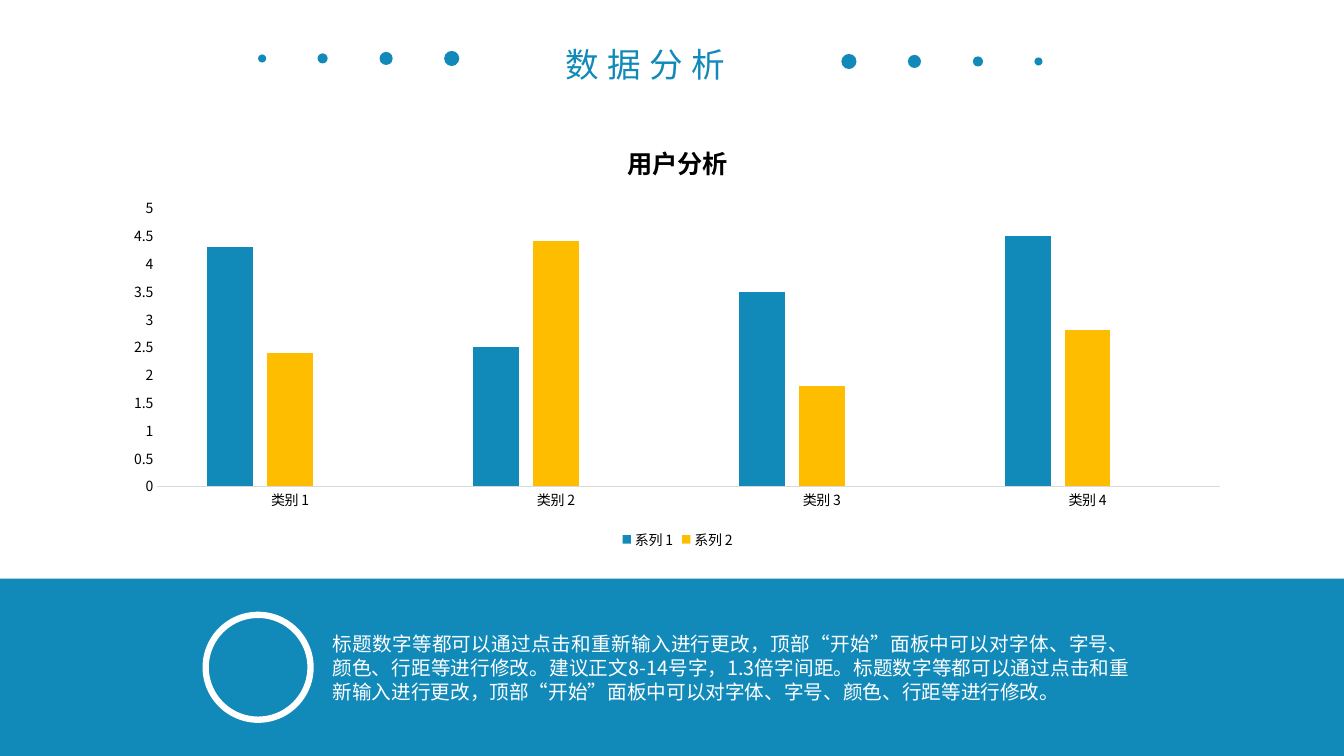
from copy import deepcopy
from lxml.etree import SubElement
from pptx import Presentation
from pptx.chart.data import CategoryChartData
from pptx.dml.color import RGBColor
from pptx.enum.chart import XL_CHART_TYPE, XL_LEGEND_POSITION, XL_TICK_MARK
from pptx.enum.shapes import MSO_SHAPE
from pptx.enum.text import PP_ALIGN
from pptx.oxml.ns import qn
from pptx.util import Inches, Pt

WIDE, HIGH = 13.33, 7.5
FONT = "Noto Sans CJK SC"
BLUE, GOLD, WHITE, BLACK, GRAY = "128AB9", "FFBD00", "FFFFFF", "000000", "D9D9D9"
TITLE = "数据分析"
BODY = ("标题数字等都可以通过点击和重新输入进行更改，顶部“开始”面板中可以对字体、字号、颜色、行距等进行修改。"
        "建议正文8-14号字，1.3倍字间距。"
        "标题数字等都可以通过点击和重新输入进行更改，顶部“开始”面板中可以对字体、字号、颜色、行距等进行修改。")
HEAD = "用户分析"
CATS = ["类别 1", "类别 2", "类别 3", "类别 4"]
SERIES = [
    ("系列 1", [4.3, 2.5, 3.5, 4.5], BLUE),
    ("系列 2", [2.4, 4.4, 1.8, 2.8], GOLD),
    ("Series 3", [None] * 4, GOLD),
]
DOTS = [(2.6, 0.08), (3.2, 0.1), (3.83, 0.13), (4.48, 0.15)]
MIRROR = 12.9
PLOT = {"x": 0.04, "y": 0.198, "w": 0.94, "h": 0.646}


def color(code):
    return RGBColor.from_string(code)


def box(*nums):
    return [Inches(n) for n in nums]


def east(root):
    for latin in list(root.iter(qn("a:latin"))):
        twin = deepcopy(latin)
        twin.tag = qn("a:ea")
        latin.addnext(twin)


def style(font, size, code, bold=False):
    font.name, font.size, font.bold = FONT, Pt(size), bold
    font.color.rgb = color(code)


def shape(home, kind, place, line=None):
    item = home.add_shape(kind, *box(*place))
    item.shadow.inherit = False
    item.fill.solid()
    item.fill.fore_color.rgb = color(BLUE)
    if line:
        item.line.color.rgb = color(line)
        item.line.width = Pt(4.5)
    else:
        item.line.fill.background()


def label(home, words, place, size, code, lead, wrap, gap=0):
    item = home.add_textbox(*box(*place))
    item.text_frame.word_wrap = wrap
    para = item.text_frame.paragraphs[0]
    para.text = words
    para.line_spacing = Pt(lead)
    if wrap:
        para.alignment = PP_ALIGN.JUSTIFY
    for run in para.runs:
        style(run.font, size, code)
        if gap:
            run.font._element.set("spc", str(gap * 100))
    east(item._element)


def graph(home, place):
    data = CategoryChartData()
    data.categories = CATS
    for name, vals, code in SERIES:
        data.add_series(name, vals)
    chart = home.add_chart(XL_CHART_TYPE.COLUMN_CLUSTERED, *box(*place), data).chart
    style(chart.font, 10, BLACK)
    chart.has_title = True
    chart.chart_title.text_frame.text = HEAD
    style(chart.chart_title.text_frame.paragraphs[0].runs[0].font, 18, BLACK, True)
    chart.chart_title.include_in_layout = False

    plot = chart.plots[0]
    plot.gap_width, plot.overlap, plot.vary_by_categories = 219, -30, False
    for bar, (name, vals, code) in zip(plot.series, SERIES):
        bar.format.fill.solid()
        bar.format.fill.fore_color.rgb = color(code)

    for axis in (chart.category_axis, chart.value_axis):
        axis.major_tick_mark = axis.minor_tick_mark = XL_TICK_MARK.NONE
        axis.has_major_gridlines = False
    chart.category_axis.format.line.color.rgb = color(GRAY)
    chart.category_axis.format.line.width = Pt(0.75)
    scale = chart.value_axis
    scale.minimum_scale, scale.maximum_scale, scale.major_unit = 0, 5, 0.5
    scale.format.line.fill.background()

    chart.has_legend = True
    chart.legend.position = XL_LEGEND_POSITION.BOTTOM
    chart.legend.include_in_layout = False
    legend = chart.legend._element
    entry = SubElement(legend, qn("c:legendEntry"))
    SubElement(entry, qn("c:idx")).set("val", "2")
    SubElement(entry, qn("c:delete")).set("val", "1")
    legend.find(qn("c:legendPos")).addnext(entry)

    area = chart._chartSpace.find(".//" + qn("c:plotArea"))
    for old in area.findall(qn("c:layout")):
        area.remove(old)
    layout = SubElement(area, qn("c:layout"))
    area.insert(0, layout)
    manual = SubElement(layout, qn("c:manualLayout"))
    SubElement(manual, qn("c:layoutTarget")).set("val", "inner")
    for key in "xy":
        SubElement(manual, qn(f"c:{key}Mode")).set("val", "edge")
    for key, share in PLOT.items():
        SubElement(manual, qn(f"c:{key}")).set("val", str(share))
    east(chart._chartSpace)


def main():
    deck = Presentation()
    deck.slide_width, deck.slide_height = box(WIDE, HIGH)
    home = deck.slides.add_slide(deck.slide_layouts[6]).shapes
    for flip, mid in ((False, 0.58), (True, 0.61)):
        group = home.add_group_shape().shapes
        for x, size in DOTS:
            left = (MIRROR - x if flip else x) - size / 2
            shape(group, MSO_SHAPE.OVAL, (left, mid - size / 2, size, size))
    label(home, TITLE, (5.51, 0.36, 1.88, 0.5), 24, BLUE, 31, False, 6)
    graph(home, (1.11, 1.22, 11.22, 4.27))
    band = 5.74
    shape(home, MSO_SHAPE.RECTANGLE, (0, band, WIDE, HIGH - band))
    shape(home, MSO_SHAPE.OVAL, (2.04, 6.1, 1.04, 1.04), WHITE)
    label(home, BODY, (3.2, 6.22, 8.1, 1.28), 14, WHITE, 17, True)
    deck.save("out.pptx")


if __name__ == "__main__":
    main()
